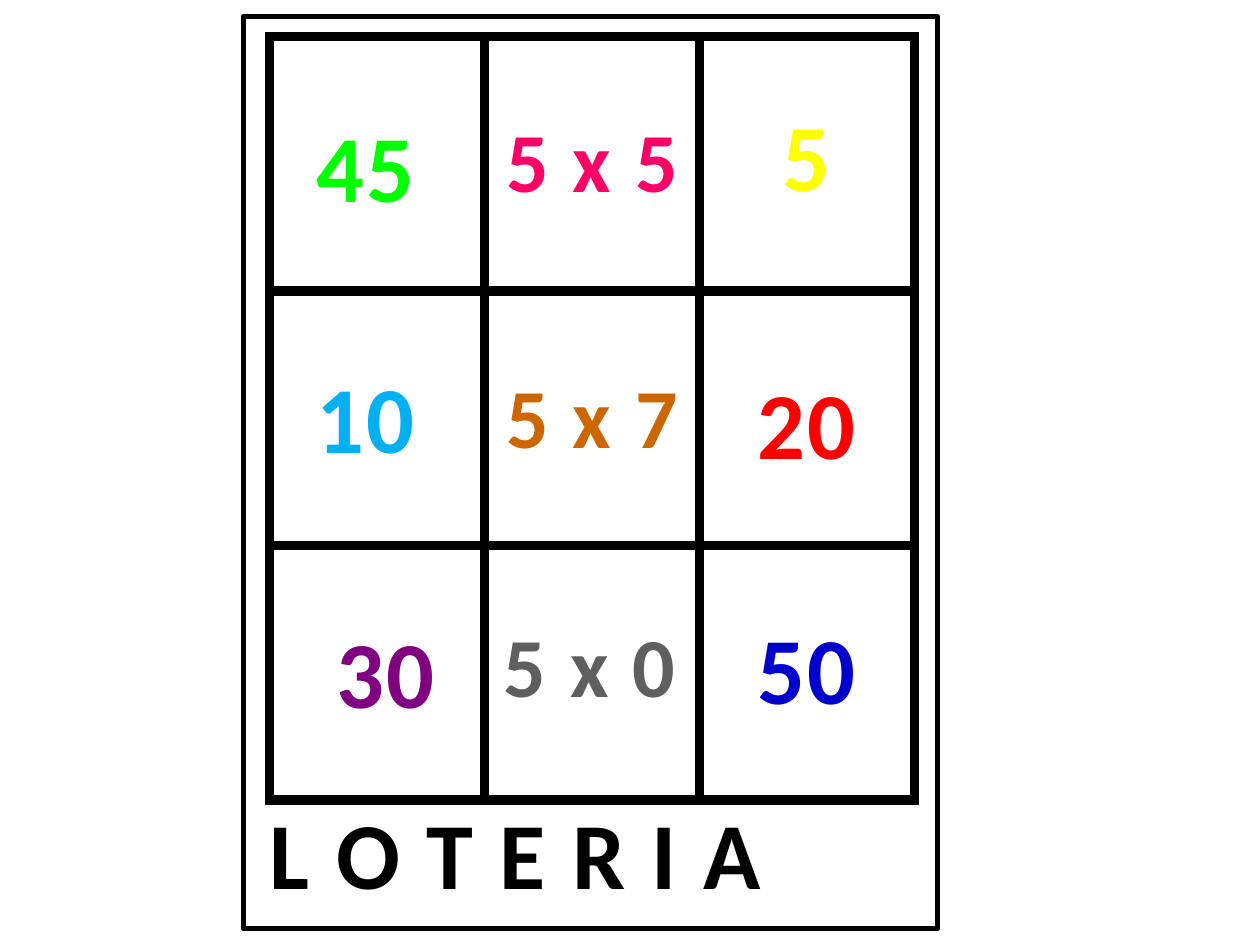
from lxml import etree
from pptx import Presentation
from pptx.dml.color import RGBColor
from pptx.enum import shapes, text
from pptx.oxml import parse_xml
from pptx.util import Inches, Pt

BLACK = RGBColor(0x00, 0x00, 0x00)
PINK = RGBColor(0xFF, 0x00, 0x66)
BROWN = RGBColor(0xCC, 0x66, 0x00)
YELLOW = RGBColor(0xFF, 0xFF, 0x00)
SKY = RGBColor(0x00, 0xB0, 0xF0)
RED = RGBColor(0xFF, 0x00, 0x00)
PURPLE = RGBColor(0x80, 0x00, 0x80)
GREEN = RGBColor(0x00, 0xFF, 0x00)
BLUE = RGBColor(0x00, 0x00, 0xCC)
GREY = RGBColor(0x5F, 0x5F, 0x5F)
FONT = "Calibri"
NAMESPACE = "http://schemas.openxmlformats.org/drawingml/2006/main"

# Box height for each text size
LABEL_HEIGHTS = {48: 0.91, 54: 1.01}

# Wording, colour, size, box width, and the box's centre and top within the board
LABELS = [
    ("45", GREEN, 54, 1.01, 0.76, 0.52),
    ("5 x 5", PINK, 48, 1.6, 2.56, 0.52),
    ("5", YELLOW, 54, 0.61, 4.26, 0.43),
    ("10", SKY, 54, 1.01, 0.76, 2.51),
    ("5 x 7", BROWN, 48, 1.6, 2.56, 2.55),
    ("20", RED, 54, 1.01, 4.26, 2.56),
    ("30", PURPLE, 54, 1.01, 0.92, 4.53),
    ("5 x 0", GREY, 48, 1.6, 2.54, 4.53),
    ("50", BLUE, 54, 1.01, 4.26, 4.5),
]


def set_borders(cell, width, color):
    properties = cell._tc.get_or_add_tcPr()
    for position, side in enumerate(("lnL", "lnR", "lnT", "lnB")):
        border = parse_xml(
            f'<a:{side} xmlns:a="{NAMESPACE}" w="{width}">'
            f'<a:solidFill><a:srgbClr val="{color}"/></a:solidFill></a:{side}>'
        )
        properties.insert(position, border)


def add_label(slide, wording, color, size, left, top, width):
    box = slide.shapes.add_textbox(
        Inches(left), Inches(top), Inches(width), Inches(LABEL_HEIGHTS[size])
    )
    frame = box.text_frame
    frame.text = wording
    frame.word_wrap = False
    frame.auto_size = text.MSO_AUTO_SIZE.SHAPE_TO_FIT_TEXT
    paragraph = frame.paragraphs[0]
    paragraph.alignment = text.PP_ALIGN.CENTER
    run = paragraph.runs[0]
    run.font.name = FONT
    run.font.size = Pt(size)
    run.font.bold = True
    run.font.color.rgb = color
    run._r.get_or_add_rPr().set("spc", "150")


def add_board(slide, left, top, width, height):
    """The 3 by 3 grid with its numbers and products."""
    table = slide.shapes.add_table(
        3, 3, Inches(left), Inches(top), Inches(width), Inches(height)
    ).table
    table.first_row = False
    table.horz_banding = False
    for cell in table.iter_cells():
        cell.fill.background()
        set_borders(cell, Pt(6), BLACK)

    for wording, color, size, label_width, center, offset in LABELS:
        label_left = left + center - label_width / 2
        add_label(slide, wording, color, size, label_left, top + offset, label_width)


def add_card(slide, left, top, width, height):
    """The outer frame, the board and the title below it."""
    add_board(slide, left + 0.21, top + 0.16, 5.12, 6.06)

    # Frame
    frame = slide.shapes.add_shape(
        shapes.MSO_SHAPE.RECTANGLE,
        Inches(left), Inches(top), Inches(width), Inches(height),
    )
    frame.shadow.inherit = False
    frame.fill.background()
    frame.line.color.rgb = BLACK
    frame.line.width = Pt(3)
    etree.SubElement(frame.line._get_or_add_ln(), f"{{{NAMESPACE}}}round")

    # Title
    add_label(slide, "L O T E R I A", BLACK, 54, left + 0.08, top + 6.13, 4.17)


def main():
    presentation = Presentation()
    presentation.slide_width = Inches(10)
    presentation.slide_height = Inches(7.5)
    slide = presentation.slides.add_slide(presentation.slide_layouts[6])
    add_card(slide, 1.93, 0.13, 5.51, 7.24)
    presentation.save("out.pptx")


if __name__ == "__main__":
    main()
